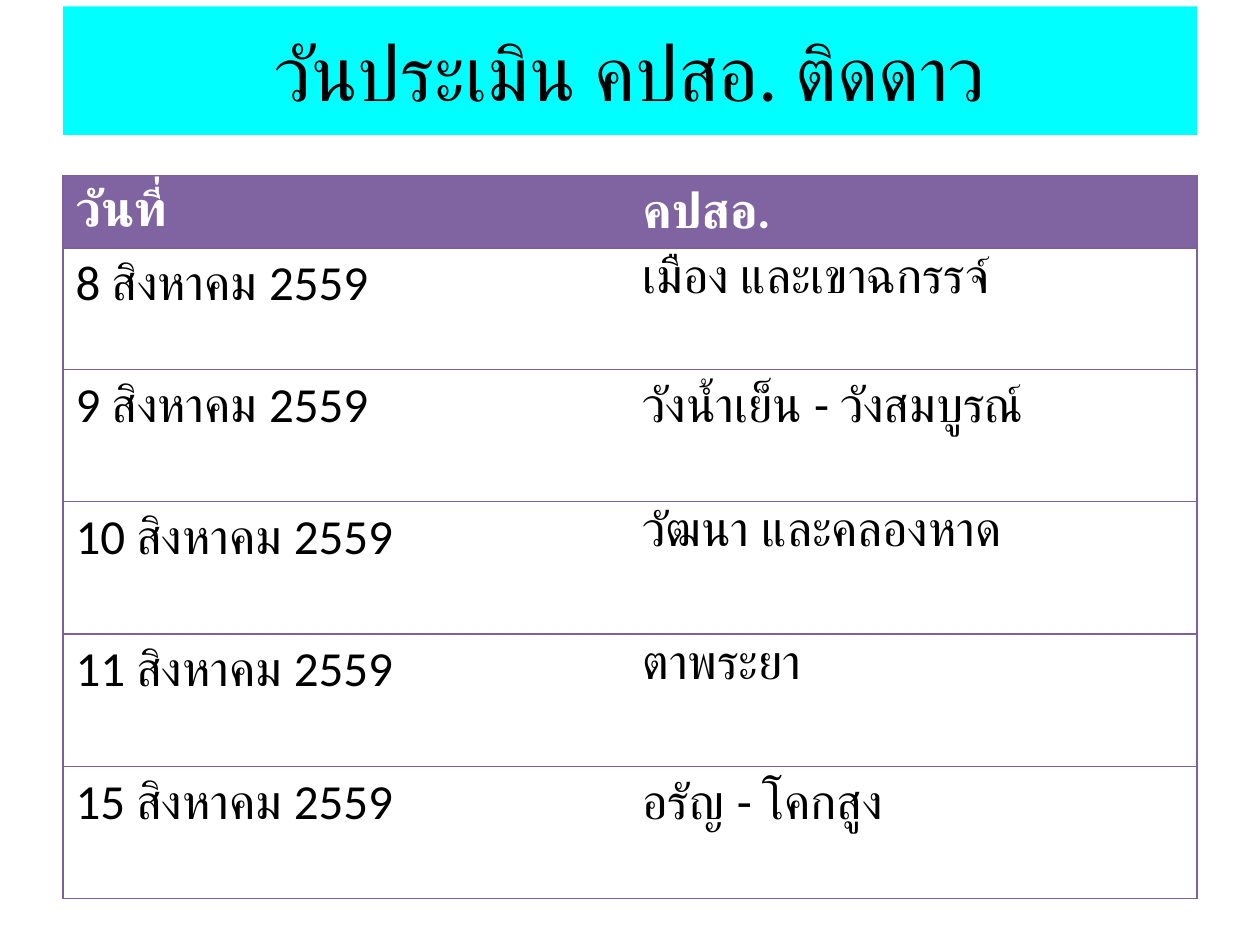
from lxml.etree import SubElement
from pptx import Presentation
from pptx.dml.color import RGBColor
from pptx.enum.text import MSO_ANCHOR, PP_ALIGN
from pptx.oxml.ns import qn
from pptx.util import Cm, Pt

CYAN = RGBColor(0x00, 0xFF, 0xFF)
PURPLE = RGBColor(0x80, 0x64, 0xA2)
BORDER = RGBColor(0x7D, 0x60, 0xA0)
WHITE = RGBColor(0xFF, 0xFF, 0xFF)
BLACK = RGBColor(0x00, 0x00, 0x00)
FONT = "Calibri"

LEFT, WIDTH = Cm(1.27), Cm(22.86)
ROW_HEIGHTS = [Cm(1.47), Cm(2.44)] + [Cm(2.67)] * 4
SCHEDULE = [
    ("วันที่", "คปสอ."),
    ("8 สิงหาคม 2559", "เมือง และเขาฉกรรจ์"),
    ("9 สิงหาคม 2559", "วังน้ำเย็น - วังสมบูรณ์"),
    ("10 สิงหาคม 2559", "วัฒนา และคลองหาด"),
    ("11 สิงหาคม 2559", "ตาพระยา"),
    ("15 สิงหาคม 2559", "อรัญ - โคกสูง"),
]


def add_span(para, text, size, color, bold=False):
    span = para.add_run()
    span.text = text
    span.font.name = FONT
    span.font.size = Pt(size)
    span.font.bold = bold
    span.font.color.rgb = color


def format_title(page, text):
    title = page.shapes.title
    title.left, title.top, title.width, title.height = LEFT, Cm(0.13), WIDTH, Cm(2.59)
    title.fill.solid()
    title.fill.fore_color.rgb = CYAN
    title.text_frame.vertical_anchor = MSO_ANCHOR.MIDDLE
    para = title.text_frame.paragraphs[0]
    para.alignment = PP_ALIGN.CENTER
    add_span(para, text, 44, BLACK)


def set_borders(cell, visible):
    """Draw the named sides (L, R, T, B) and clear the others."""
    properties = cell._tc.get_or_add_tcPr()
    for side in "LRTB":
        line = SubElement(properties, qn(f"a:ln{side}"), w=str(Pt(0.75)))
        if side in visible:
            fill = SubElement(line, qn("a:solidFill"))
            SubElement(fill, qn("a:srgbClr"), val=str(BORDER))
        else:
            SubElement(line, qn("a:noFill"))


def fill_cell(cell, text, is_header, outer_side):
    set_borders(cell, outer_side + "TB")
    if is_header:
        cell.fill.solid()
        cell.fill.fore_color.rgb = PURPLE
        cell.vertical_anchor = MSO_ANCHOR.MIDDLE
    else:
        cell.fill.background()
    para = cell.text_frame.paragraphs[0]
    add_span(para, text, 28, WHITE if is_header else BLACK, is_header)


def add_schedule(page):
    frame = page.shapes.add_table(
        len(SCHEDULE), 2, LEFT, Cm(3.53), WIDTH, sum(ROW_HEIGHTS))
    table = frame.table
    table.horz_banding = False
    for row_index, (texts, height) in enumerate(zip(SCHEDULE, ROW_HEIGHTS)):
        table.rows[row_index].height = height
        for column_index, text in enumerate(texts):
            fill_cell(table.cell(row_index, column_index), text,
                      row_index == 0, "LR"[column_index])


def main():
    deck = Presentation()
    deck.slide_width, deck.slide_height = Cm(25.4), Cm(19.05)
    page = deck.slides.add_slide(deck.slide_layouts[5])
    format_title(page, "วันประเมิน คปสอ. ติดดาว")
    add_schedule(page)
    deck.save("out.pptx")


if __name__ == "__main__":
    main()
